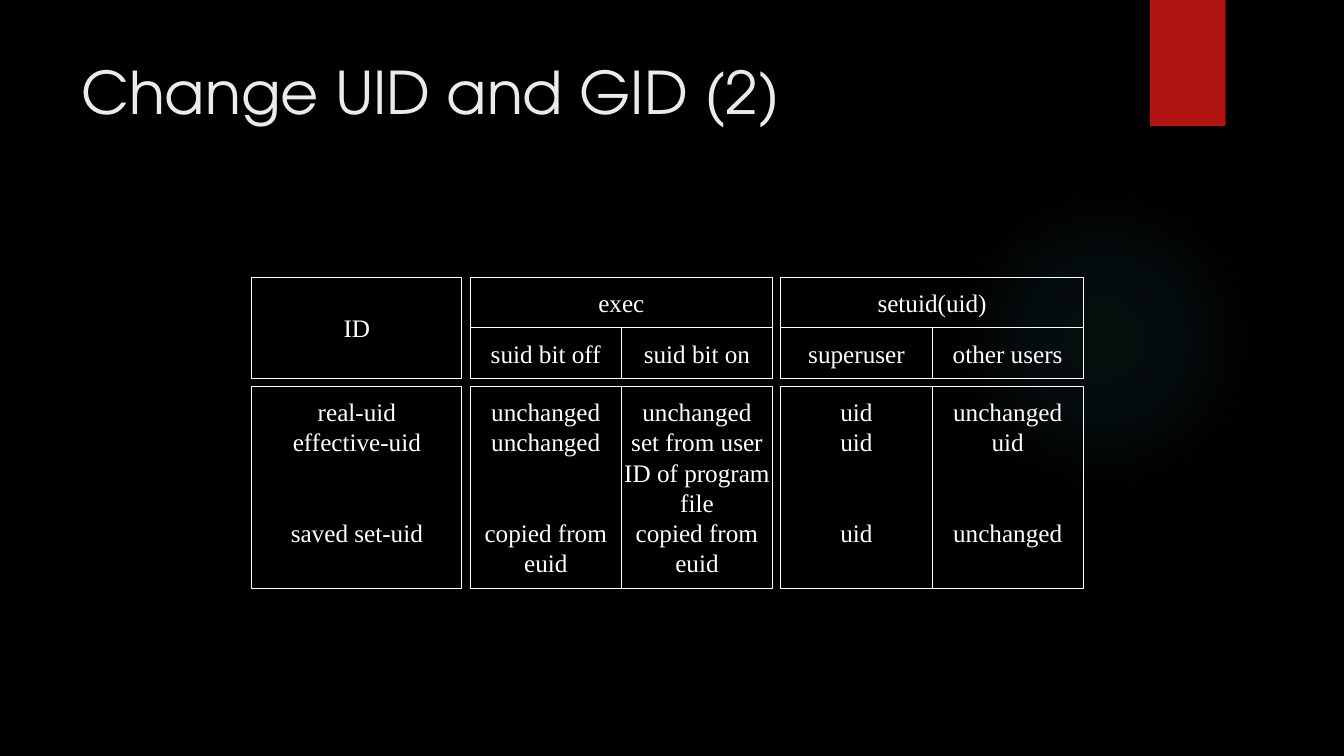
"""Build the slide on how exec and setuid change user IDs."""
from dataclasses import dataclass

from lxml.etree import SubElement
from pptx import Presentation
from pptx.dml.color import RGBColor
from pptx.enum.shapes import MSO_SHAPE as Preset
from pptx.enum.text import MSO_ANCHOR as Anchor, PP_ALIGN as Align
from pptx.oxml.ns import qn
from pptx.util import Cm, Pt

WHITE = "FFFFFF"
LINE_PITCH = 21.6
GAP = 0.21
ID_LEFT, ID_WIDTH = 6.35, 5.29
COLUMN_WIDTH = 3.81
HEAD_TOP, HEAD_HEIGHT = 6.99, 1.27
BODY_TOP, BODY_HEIGHT = HEAD_TOP + 2 * HEAD_HEIGHT + GAP, 5.08


@dataclass
class Box:
    left: float
    top: float
    width: float
    height: float


@dataclass
class Column:
    heading: str
    lines: tuple[str, ...]


@dataclass
class Group:
    heading: str
    columns: tuple[Column, ...]


ID_LINES = ("real-uid", "effective-uid", "", "", "saved set-uid")
GROUPS = (
    Group("exec", (
        Column("suid bit off", ("unchanged", "unchanged", "", "", "copied from", "euid")),
        Column("suid bit on", ("unchanged", "set from user", "ID of program", "file",
                               "copied from", "euid")),
    )),
    Group("setuid(uid)", (
        Column("superuser", ("uid", "uid", "", "", "uid")),
        Column("other users", ("unchanged", "uid", "", "", "unchanged")),
    )),
)


def color(value: str) -> RGBColor:
    """Turn a hex string into a colour."""
    return RGBColor.from_string(value)


def apply(target, formats: dict) -> None:
    """Set each named attribute on the target."""
    for name, value in formats.items():
        setattr(target, name, value)


def lengths(box: Box) -> list:
    """Give the place and size of a box as lengths."""
    return [Cm(value) for value in (box.left, box.top, box.width, box.height)]


def add_plain_shape(slide, preset, box: Box):
    """Add a shape without shadow, fill or line."""
    shape = slide.shapes.add_shape(preset, *lengths(box))
    shape.shadow.inherit = False
    shape.fill.background()
    shape.line.fill.background()
    return shape


def add_glow(slide, box: Box) -> None:
    """Add a faint circle that fades out from its centre."""
    shape = add_plain_shape(slide, Preset.OVAL, box)
    properties = shape.element.spPr
    empty_fill = properties.find(qn("a:noFill"))
    gradient = SubElement(properties, qn("a:gradFill"), rotWithShape="1")
    properties.replace(empty_fill, gradient)
    stops = SubElement(gradient, qn("a:gsLst"))
    for position, opacity in ((0, 7), (36, 6), (69, 0), (100, 0)):
        stop = SubElement(stops, qn("a:gs"), pos=str(position * 1000))
        tint = SubElement(stop, qn("a:srgbClr"), val="50B9C1")
        SubElement(tint, qn("a:alpha"), val=str(opacity * 1000))
    focus = SubElement(gradient, qn("a:path"), path="circle")
    SubElement(focus, qn("a:fillToRect"), l="50000", t="50000", r="50000", b="50000")


def add_title(slide, text: str, box: Box) -> None:
    """Add the slide title."""
    frame = slide.shapes.add_textbox(*lengths(box)).text_frame
    apply(frame, {"word_wrap": True, "vertical_anchor": Anchor.TOP, "text": text})
    font = frame.paragraphs[0].font
    apply(font, {"name": "TeX Gyre Adventor", "size": Pt(42)})
    font.color.rgb = color("EBEBEB")


def add_cell(slide, box: Box, lines: tuple[str, ...], anchor=Anchor.MIDDLE) -> None:
    """Add an outlined cell, where an empty line becomes space before the next."""
    shape = add_plain_shape(slide, Preset.RECTANGLE, box)
    shape.line.color.rgb = color(WHITE)
    shape.line.width = Pt(0.75)
    frame = shape.text_frame
    apply(frame, {"word_wrap": False, "vertical_anchor": anchor,
                  "margin_top": Cm(0.25), "margin_bottom": Cm(0.25)})
    skipped = 0
    for index, line in enumerate(lines):
        if not line:
            skipped += 1
            continue
        paragraph = frame.add_paragraph() if index else frame.paragraphs[0]
        apply(paragraph, {"text": line, "alignment": Align.CENTER,
                          "line_spacing": Pt(LINE_PITCH)})
        if skipped:
            paragraph.space_before = Pt(skipped * LINE_PITCH)
        apply(paragraph.font, {"name": "Times New Roman", "size": Pt(18)})
        paragraph.font.color.rgb = color(WHITE)
        skipped = 0


def add_group(slide, group: Group, left: float) -> float:
    """Add the cells of one call and return their total width."""
    width = COLUMN_WIDTH * len(group.columns)
    add_cell(slide, Box(left, HEAD_TOP, width, HEAD_HEIGHT), (group.heading,))
    for index, column in enumerate(group.columns):
        x = left + index * COLUMN_WIDTH
        heading_box = Box(x, HEAD_TOP + HEAD_HEIGHT, COLUMN_WIDTH, HEAD_HEIGHT)
        add_cell(slide, heading_box, (column.heading,))
        body_box = Box(x, BODY_TOP, COLUMN_WIDTH, BODY_HEIGHT)
        add_cell(slide, body_box, column.lines, Anchor.TOP)
    return width


def main() -> None:
    """Build and save the presentation."""
    presentation = Presentation()
    apply(presentation, {"slide_width": Cm(33.87), "slide_height": Cm(19.05)})
    slide = presentation.slides.add_slide(presentation.slide_layouts[6])
    slide.background.fill.solid()
    slide.background.fill.fore_color.rgb = color("000000")

    add_glow(slide, Box(23.9, 4.65, 7.82, 7.82))
    ribbon = add_plain_shape(slide, Preset.RECTANGLE, Box(28.98, 0, 1.9, 3.18))
    ribbon.fill.solid()
    ribbon.fill.fore_color.rgb = color("B01513")
    add_title(slide, "Change UID and GID (2)", Box(1.8, 1.27, 26.14, 3.89))

    add_cell(slide, Box(ID_LEFT, HEAD_TOP, ID_WIDTH, 2 * HEAD_HEIGHT), ("ID",))
    add_cell(slide, Box(ID_LEFT, BODY_TOP, ID_WIDTH, BODY_HEIGHT), ID_LINES, Anchor.TOP)
    left = ID_LEFT + ID_WIDTH + GAP
    for group in GROUPS:
        left += add_group(slide, group, left) + GAP

    presentation.save("out.pptx")


if __name__ == "__main__":
    main()
